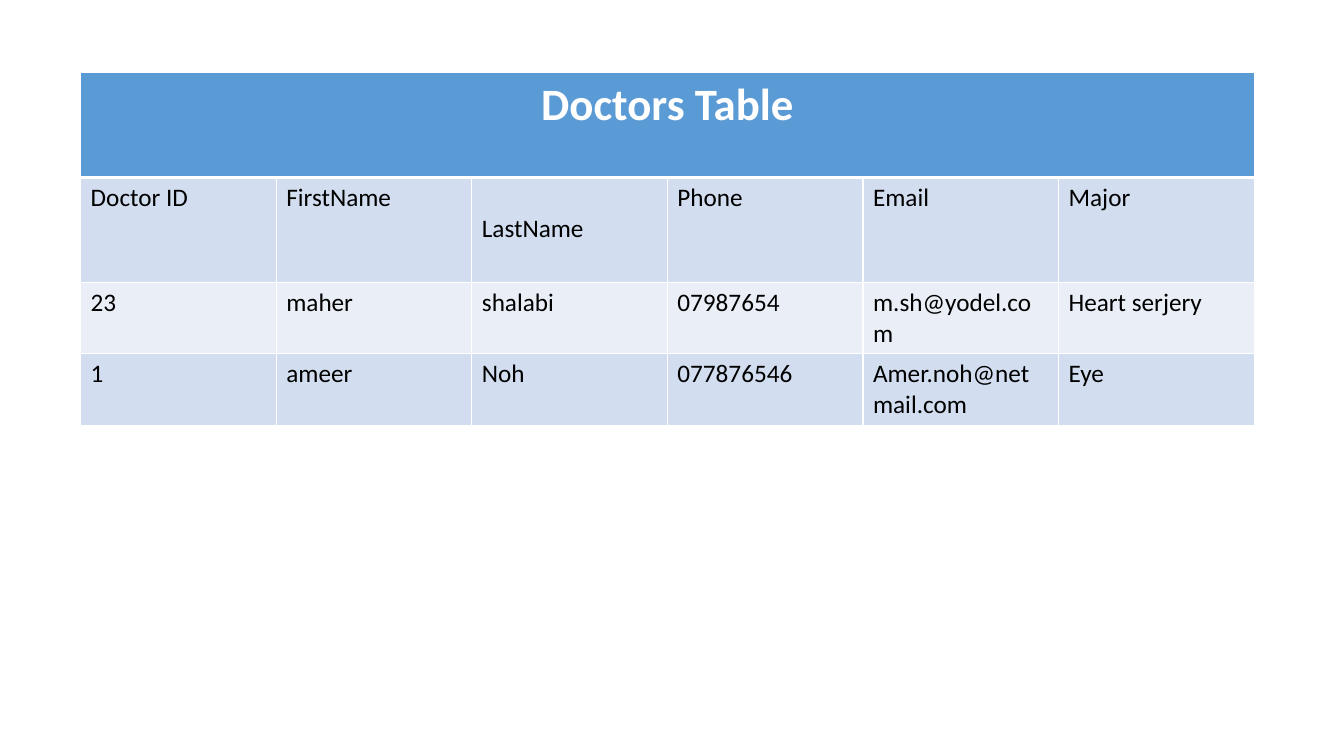
from dataclasses import dataclass

from lxml.etree import SubElement
from pptx import Presentation
from pptx.dml.color import RGBColor
from pptx.enum.text import PP_ALIGN as Align
from pptx.oxml.ns import qn
from pptx.table import _Cell as Cell
from pptx.util import Inches, Pt

COLORS = {
    "header": "5B9BD5",
    "band_dark": "D2DEEF",
    "band_light": "EAEFF7",
    "border": "FFFFFF",
    "title": "FFFFFF",
    "text": "000000",
}
FONT = "Calibri"
COLUMN_COUNT = 6
COLUMN_WIDTH = 1.94


@dataclass
class TableRow:
    texts: list[str]
    height: float
    fill: str


ROWS = [
    TableRow(["Doctors Table"] + [""] * (COLUMN_COUNT - 1), 1.04, "header"),
    TableRow(["Doctor ID", "FirstName", "LastName", "Phone", "Email", "Major"], 1.04, "band_dark"),
    TableRow(["23", "maher", "shalabi", "07987654", "m.sh@yodel.com", "Heart serjery"],
             0.42, "band_light"),
    TableRow(["1", "ameer", "Noh", "077876546", "Amer.noh@netmail.com", "Eye"], 0.42, "band_dark"),
]


def set_borders(cell: Cell, top: float, bottom: float) -> None:
    """Draw all four cell borders; widths are in points, the sides are 1 pt."""
    properties = cell._tc.get_or_add_tcPr()
    widths = {"a:lnL": 1, "a:lnR": 1, "a:lnT": top, "a:lnB": bottom}
    for index, (tag, width) in enumerate(widths.items()):
        line = SubElement(properties, qn(tag), w=str(Pt(width)))
        fill = SubElement(line, qn("a:solidFill"))
        SubElement(fill, qn("a:srgbClr"), val=COLORS["border"])
        properties.insert(index, line)


def write_text(cell: Cell, text: str, is_title: bool) -> None:
    para = cell.text_frame.paragraphs[0]
    para.alignment = Align.CENTER if is_title else Align.LEFT
    span = para.add_run()
    span.text = text
    span.font.name = FONT
    span.font.size = Pt(32 if is_title else 18)
    span.font.bold = is_title
    span.font.color.rgb = RGBColor.from_string(COLORS["title" if is_title else "text"])


def main() -> None:
    deck = Presentation()
    deck.slide_width, deck.slide_height = Inches(13.33), Inches(7.5)
    page = deck.slides.add_slide(deck.slide_layouts[6])

    table = page.shapes.add_table(
        len(ROWS), COLUMN_COUNT, Inches(0.8), Inches(0.72),
        Inches(COLUMN_COUNT * COLUMN_WIDTH), Inches(sum(row.height for row in ROWS)),
    ).table
    for column in table.columns:
        column.width = Inches(COLUMN_WIDTH)

    for row_index, row in enumerate(ROWS):
        table.rows[row_index].height = Inches(row.height)
        for column_index, text in enumerate(row.texts):
            cell = table.cell(row_index, column_index)
            cell.fill.solid()
            cell.fill.fore_color.rgb = RGBColor.from_string(COLORS[row.fill])
            set_borders(cell, top=3 if row_index == 1 else 1, bottom=3 if row_index == 0 else 1)
            if text:
                write_text(cell, text, is_title=row_index == 0)
            if text == "LastName":
                cell.margin_top = Inches(0.36)

    table.cell(0, 0).merge(table.cell(0, COLUMN_COUNT - 1))
    deck.save("out.pptx")


if __name__ == "__main__":
    main()
